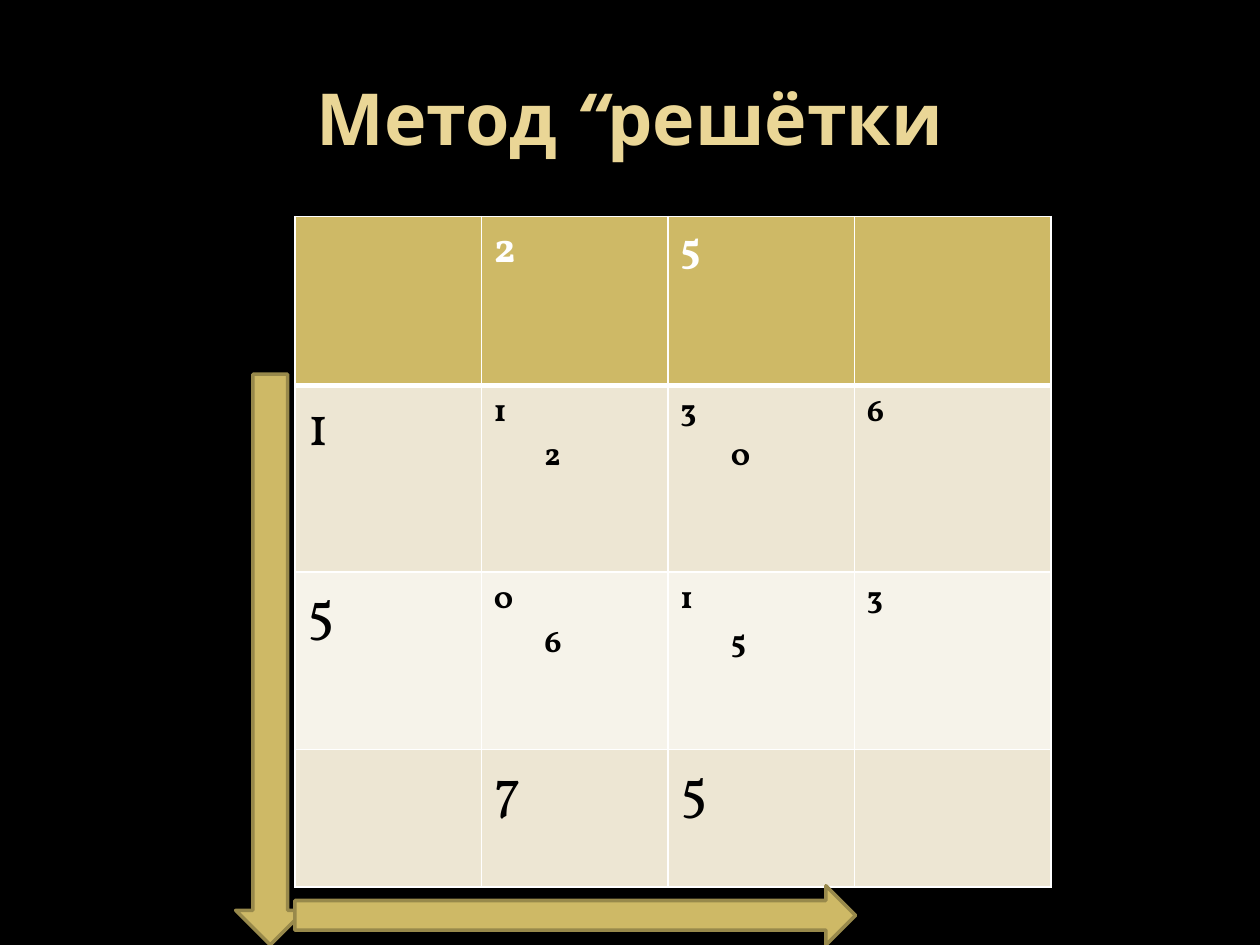
from dataclasses import dataclass

from lxml.etree import SubElement
from pptx import Presentation
from pptx.dml.color import RGBColor
from pptx.enum.shapes import MSO_SHAPE
from pptx.enum.text import MSO_ANCHOR, PP_ALIGN
from pptx.oxml.ns import qn
from pptx.util import Inches, Pt

BLACK = RGBColor(0x00, 0x00, 0x00)
WHITE = RGBColor(0xFF, 0xFF, 0xFF)
GOLD = RGBColor(0xCE, 0xB9, 0x66)
BRONZE = RGBColor(0x98, 0x89, 0x4B)
CREAM = RGBColor(0xEA, 0xD6, 0x96)
SAND = RGBColor(0xED, 0xE6, 0xD3)
IVORY = RGBColor(0xF6, 0xF3, 0xEA)


@dataclass
class Style:
    size: int
    bold: bool
    color: RGBColor


@dataclass
class Row:
    height: float
    fill: RGBColor
    texts: list[str]
    styles: list[Style]


@dataclass
class Arrow:
    kind: MSO_SHAPE
    left: float
    top: float
    width: float
    height: float


HEAD = Style(24, True, WHITE)
LARGE = Style(32, False, BLACK)
SMALL = Style(18, True, BLACK)
MIXED = [LARGE, SMALL, SMALL, SMALL]

WIDTHS = [1.48, 1.48, 1.48, 1.56]
ROWS = [
    Row(1.34, GOLD, ["", "2", "5", ""], [HEAD] * 4),
    Row(1.48, SAND, ["1", "1\n2", "3\n0", "6"], MIXED),
    Row(1.41, IVORY, ["5", "0\n6", "1\n5", "3"], MIXED),
    Row(1.09, SAND, ["", "7", "5", ""], [LARGE] * 4),
]
ARROWS = [
    Arrow(MSO_SHAPE.DOWN_ARROW, 1.87, 2.97, 0.55, 4.53),
    Arrow(MSO_SHAPE.RIGHT_ARROW, 2.34, 7.03, 4.45, 0.47),
]


def add_title(slide) -> None:
    box = slide.shapes.add_textbox(Inches(0.5), Inches(0.3), Inches(9), Inches(1.25))
    frame = box.text_frame
    frame.word_wrap = True
    frame.vertical_anchor = MSO_ANCHOR.MIDDLE
    line = frame.paragraphs[0]
    line.alignment = PP_ALIGN.CENTER
    for text, slant in [("Метод ", False), ("“", True), ("решётки", False)]:
        run = line.add_run()
        run.text = text
        font = run.font
        font.name, font.size = "Noto Sans", Pt(41)
        font.bold, font.italic = True, slant
        font.color.rgb = CREAM


def add_edge(cell, side: str, width: int) -> None:
    edge = SubElement(cell._tc.get_or_add_tcPr(), qn(f"a:ln{side}"), w=str(Pt(width)))
    fill = SubElement(edge, qn("a:solidFill"))
    SubElement(fill, qn("a:srgbClr"), val=str(WHITE))


def fill_cell(cell, text: str, style: Style) -> None:
    cell.text_frame.text = text
    for rank, line in enumerate(cell.text_frame.paragraphs):
        line._p.get_or_add_pPr().set("marL", str(Inches(0.4 * rank)))
        font = line.font
        for run in line.runs:
            font = run.font
        font.name, font.size = "Vollkorn", Pt(style.size)
        font.bold = style.bold
        font.color.rgb = style.color


def add_grid(slide) -> None:
    frame = slide.shapes.add_table(
        len(ROWS), len(WIDTHS), Inches(2.34), Inches(1.72),
        Inches(sum(WIDTHS)), Inches(sum(row.height for row in ROWS)),
    )
    table = frame.table
    for col, width in zip(table.columns, WIDTHS):
        col.width = Inches(width)
    for rank, row in enumerate(ROWS):
        table.rows[rank].height = Inches(row.height)
        edges = {"L": 1, "R": 1, "T": 3 if rank == 1 else 1, "B": 3 if rank == 0 else 1}
        for cell, text, style in zip(table.rows[rank].cells, row.texts, row.styles):
            fill_cell(cell, text, style)
            for side, width in edges.items():
                add_edge(cell, side, width)
            cell.fill.solid()
            cell.fill.fore_color.rgb = row.fill


def add_arrow(slide, arrow: Arrow) -> None:
    shape = slide.shapes.add_shape(
        arrow.kind, Inches(arrow.left), Inches(arrow.top),
        Inches(arrow.width), Inches(arrow.height),
    )
    shape.shadow.inherit = False
    shape.fill.solid()
    shape.fill.fore_color.rgb = GOLD
    shape.line.color.rgb = BRONZE
    shape.line.width = Pt(2)


def main() -> None:
    deck = Presentation()
    deck.slide_width, deck.slide_height = Inches(10), Inches(7.5)
    slide = deck.slides.add_slide(deck.slide_layouts[6])
    slide.background.fill.solid()
    slide.background.fill.fore_color.rgb = BLACK
    add_title(slide)
    add_grid(slide)
    for arrow in ARROWS:
        add_arrow(slide, arrow)
    deck.save("out.pptx")


if __name__ == "__main__":
    main()
